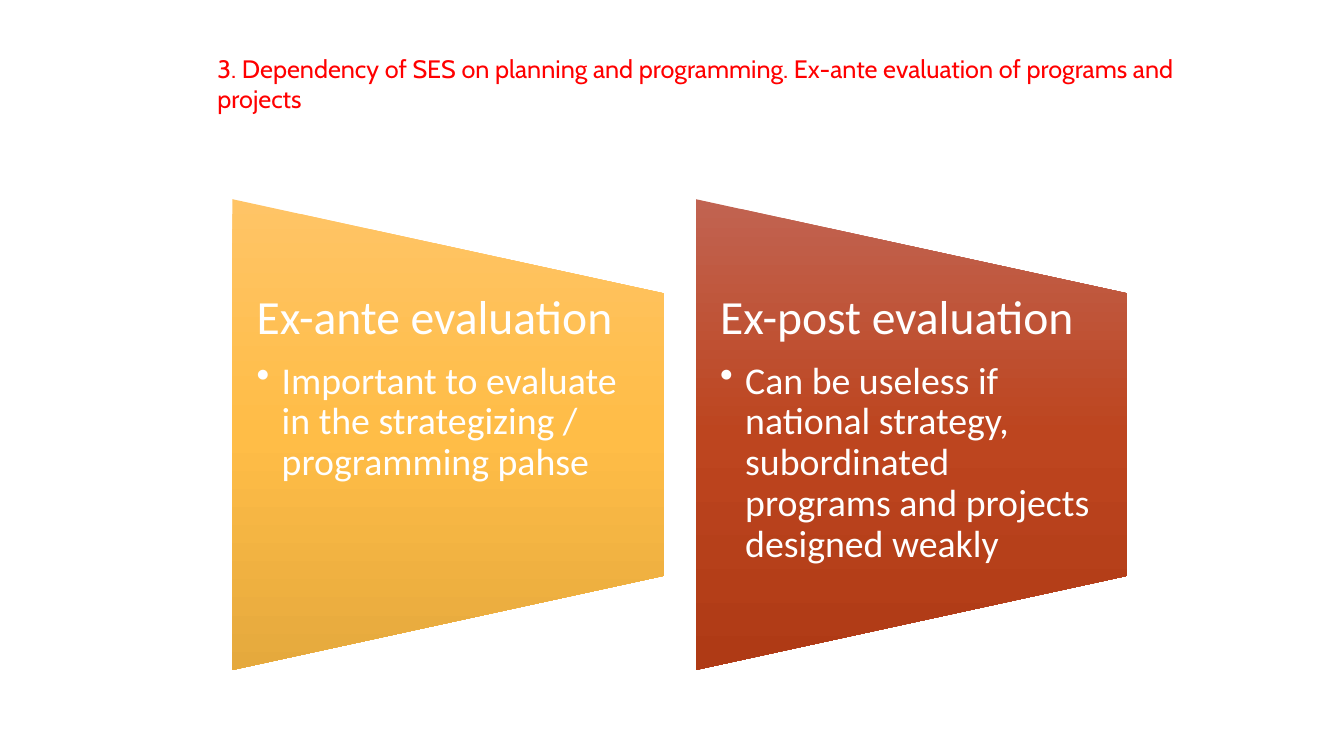
import pptx
import pptx.dml.color
import pptx.enum.shapes
import pptx.enum.text
import pptx.oxml.ns
import pptx.util
from lxml import etree
from pptx.util import Cm

COLORS = {"title": "FF0000", "text": "FFFFFF"}
GRADIENTS = {
    "amber": ("FFC466", "FFBD47", "E5A93D"),
    "rust": ("C16351", "BD451F", "AF3A15"),
}
CARDS = [
    ("Ex-ante evaluation",
     "Important to evaluate in the strategizing / programming pahse", "amber"),
    ("Ex-post evaluation",
     "Can be useless if national strategy, subordinated programs "
     "and projects designed weakly", "rust"),
]

# Card layout as it appears once the trapezoid is turned
CARD_LEFT, CARD_TOP, CARD_PITCH = Cm(5.86), Cm(5.02), Cm(11.68)
CARD_W, CARD_H = Cm(10.87), Cm(11.86)
TEXT_TOP, TEXT_H = Cm(7.39), Cm(7.11)


def add_child(parent, tag, **attrs):
    return etree.SubElement(parent, pptx.oxml.ns.qn(tag), attrs)


def add_text_box(slide, left, top, width, height, inset=None, anchor="TOP"):
    tf = slide.shapes.add_textbox(left, top, width, height).text_frame
    tf.word_wrap = True
    tf.vertical_anchor = getattr(pptx.enum.text.MSO_ANCHOR, anchor)
    if inset is not None:
        tf.margin_left = tf.margin_right = inset
        tf.margin_top = tf.margin_bottom = 0
    return tf


def write(p, text, size, color, font="Calibri", spacing=None, after=0, bullet=False):
    if bullet:
        pPr = p._p.get_or_add_pPr()
        pPr.set("marL", str(Cm(0.63)))
        pPr.set("indent", str(-Cm(0.63)))
        add_child(pPr, "a:buChar", char="•")
    p.line_spacing = spacing
    p.space_after = pptx.util.Pt(after)
    r = p.add_run()
    r.text = text
    r.font.name = font
    r.font.size = pptx.util.Pt(size)
    r.font.color.rgb = pptx.dml.color.RGBColor.from_string(COLORS[color])


def fill_gradient(sp, colors):
    sp.fill.gradient()
    sp.fill.gradient_angle = 270
    grad = sp._element.spPr.find(pptx.oxml.ns.qn("a:gradFill"))
    # Keep the shading vertical on the page although the shape is turned
    grad.set("rotWithShape", "0")
    stops = grad.find(pptx.oxml.ns.qn("a:gsLst"))
    for stop in list(stops):
        stops.remove(stop)
    for i, color in enumerate(colors):
        stop = add_child(stops, "a:gs", pos=str(i * 50000))
        add_child(stop, "a:srgbClr", val=color)


def add_trapezoid(slide, left, colors):
    # Before turning, width and height are swapped around the same centre
    shift = (CARD_H - CARD_W) // 2
    sp = slide.shapes.add_shape(
        pptx.enum.shapes.MSO_SHAPE.FLOWCHART_MANUAL_OPERATION,
        left - shift, CARD_TOP + shift, CARD_H, CARD_W)
    sp.rotation = 270
    sp.shadow.inherit = False
    sp.line.fill.background()
    fill_gradient(sp, colors)


def add_card(slide, left, heading, point, gradient):
    add_trapezoid(slide, left, GRADIENTS[gradient])
    tf = add_text_box(slide, left, TEXT_TOP, CARD_W, TEXT_H, inset=Cm(0.61))
    write(tf.paragraphs[0], heading, 34, "text", spacing=0.9, after=12)
    p = tf.add_paragraph()
    p.level = 1
    write(p, point, 27, "text", spacing=0.9, after=4, bullet=True)


def main():
    prs = pptx.Presentation()
    prs.slide_width, prs.slide_height = Cm(33.87), Cm(19.05)
    slide = prs.slides.add_slide(prs.slide_layouts[6])

    # Title
    tf = add_text_box(slide, Cm(5.23), Cm(0.97), Cm(25.58), Cm(2.26), anchor="MIDDLE")
    write(tf.paragraphs[0],
          "3. Dependency of SES on planning and programming. "
          "Ex-ante evaluation of programs and projects",
          18, "title", font="Cabin")

    # Evaluation cards
    for i, card in enumerate(CARDS):
        add_card(slide, CARD_LEFT + i * CARD_PITCH, *card)

    prs.save("out.pptx")


if __name__ == "__main__":
    main()
